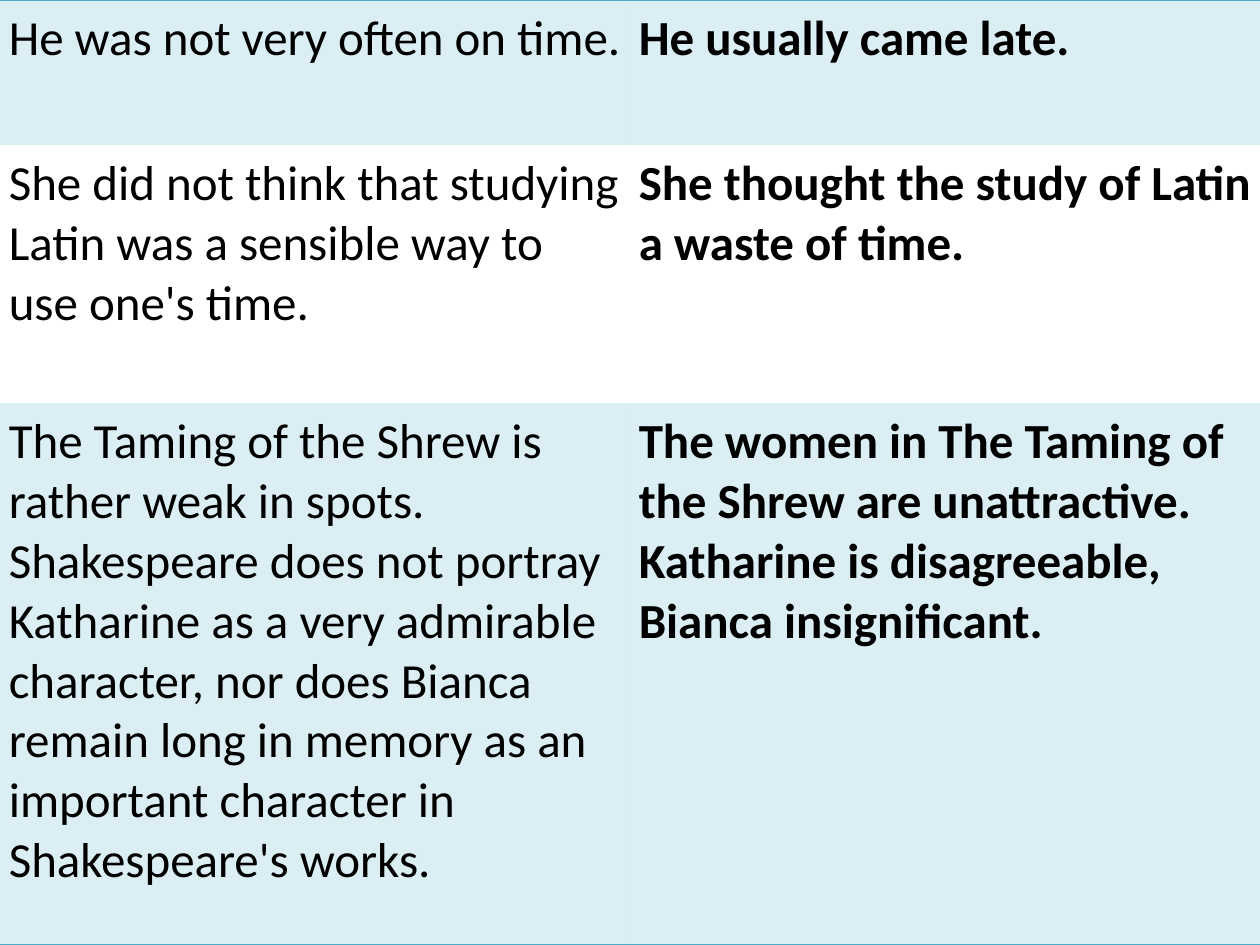
"""Build a slide with a table of hedged sentences and their positive forms."""
from dataclasses import dataclass

from lxml import etree
from pptx import Presentation
from pptx.dml.color import RGBColor
from pptx.oxml.ns import qn
from pptx.table import _Cell
from pptx.util import Inches, Pt

TEAL = RGBColor(0x4B, 0xAC, 0xC6)
BLACK = RGBColor(0, 0, 0)
FONT = "Calibri"
SIZE = Pt(28)
INSET = Inches(0.07)
WIDE, HIGH = Inches(10), Inches(7.5)
BLANK = 6
SIDES = ("L", "R", "T", "B")


@dataclass
class Pair:
    """One table row, with its share of the slide's height."""
    weak: str
    strong: str
    share: float


PAIRS = [
    Pair("He was not very often on time.", "He usually came late.", 1.15 / 7.5),
    Pair("She did not think that studying Latin was a sensible way to use one's time.",
         "She thought the study of Latin a waste of time.", 2.05 / 7.5),
    Pair("The Taming of the Shrew is rather weak in spots. Shakespeare does not "
         "portray Katharine as a very admirable character, nor does Bianca remain "
         "long in memory as an important character in Shakespeare's works.",
         "The women in The Taming of the Shrew are unattractive. Katharine is "
         "disagreeable, Bianca insignificant.", 4.3 / 7.5),
]


def rule(cell: _Cell, drawn: str) -> None:
    """Draw the named sides of a cell and clear the others."""
    props = cell._tc.get_or_add_tcPr()
    for side in SIDES:
        line = etree.SubElement(props, qn(f"a:ln{side}"), w=str(Pt(1)))
        if side in drawn:
            fill = etree.SubElement(line, qn("a:solidFill"))
            etree.SubElement(fill, qn("a:srgbClr"), val=str(TEAL))
        else:
            etree.SubElement(line, qn("a:noFill"))


def shade(cell: _Cell, band: bool) -> None:
    """Tint a banded cell and leave any other clear."""
    if not band:
        cell.fill.background()
        return
    cell.fill.solid()
    cell.fill.fore_color.rgb = TEAL
    color = cell._tc.tcPr.find(qn("a:solidFill")).find(qn("a:srgbClr"))
    etree.SubElement(color, qn("a:alpha"), val="20000")


def write(cell: _Cell, text: str, bold: bool) -> None:
    """Set the text of a cell and format its run."""
    cell.margin_left = cell.margin_right = INSET
    cell.margin_top = cell.margin_bottom = INSET
    cell.text_frame.text = text
    font = cell.text_frame.paragraphs[0].runs[0].font
    font.name, font.size, font.bold = FONT, SIZE, bold
    font.color.rgb = BLACK


def main() -> None:
    """Build and save the deck."""
    deck = Presentation()
    deck.slide_width, deck.slide_height = WIDE, HIGH
    slide = deck.slides.add_slide(deck.slide_layouts[BLANK])
    table = slide.shapes.add_table(len(PAIRS), 2, 0, 0, WIDE, HIGH).table
    table.first_row = table.horz_banding = False
    last = len(PAIRS) - 1
    for row, pair in enumerate(PAIRS):
        table.rows[row].height = round(HIGH * pair.share)
        drawn = "T" * (row == 0) + "B" * (row == last)
        for col, text in enumerate((pair.weak, pair.strong)):
            cell = table.cell(row, col)
            rule(cell, drawn)
            shade(cell, row % 2 == 0)
            write(cell, text, col == 1)
    deck.save("out.pptx")


if __name__ == "__main__":
    main()
